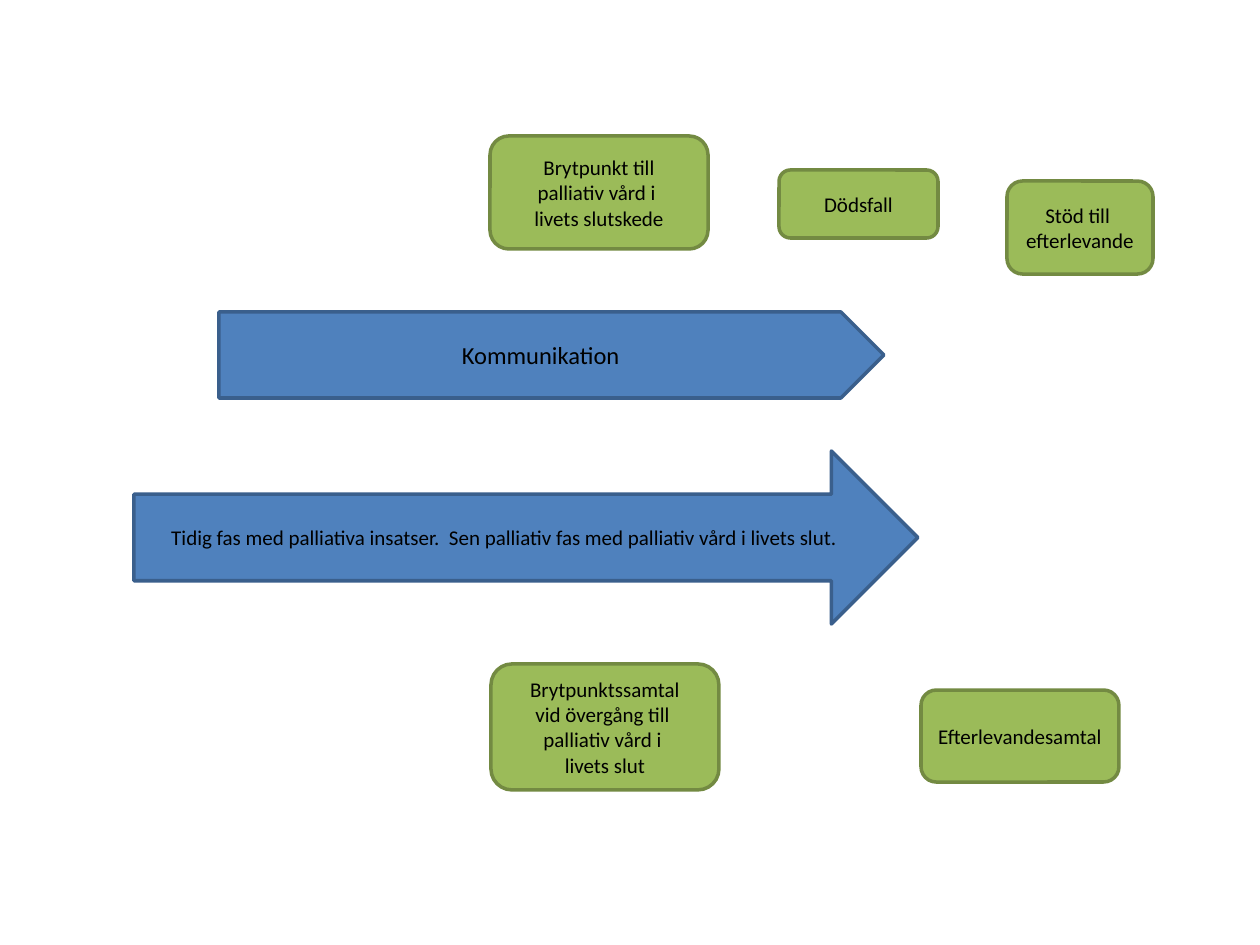
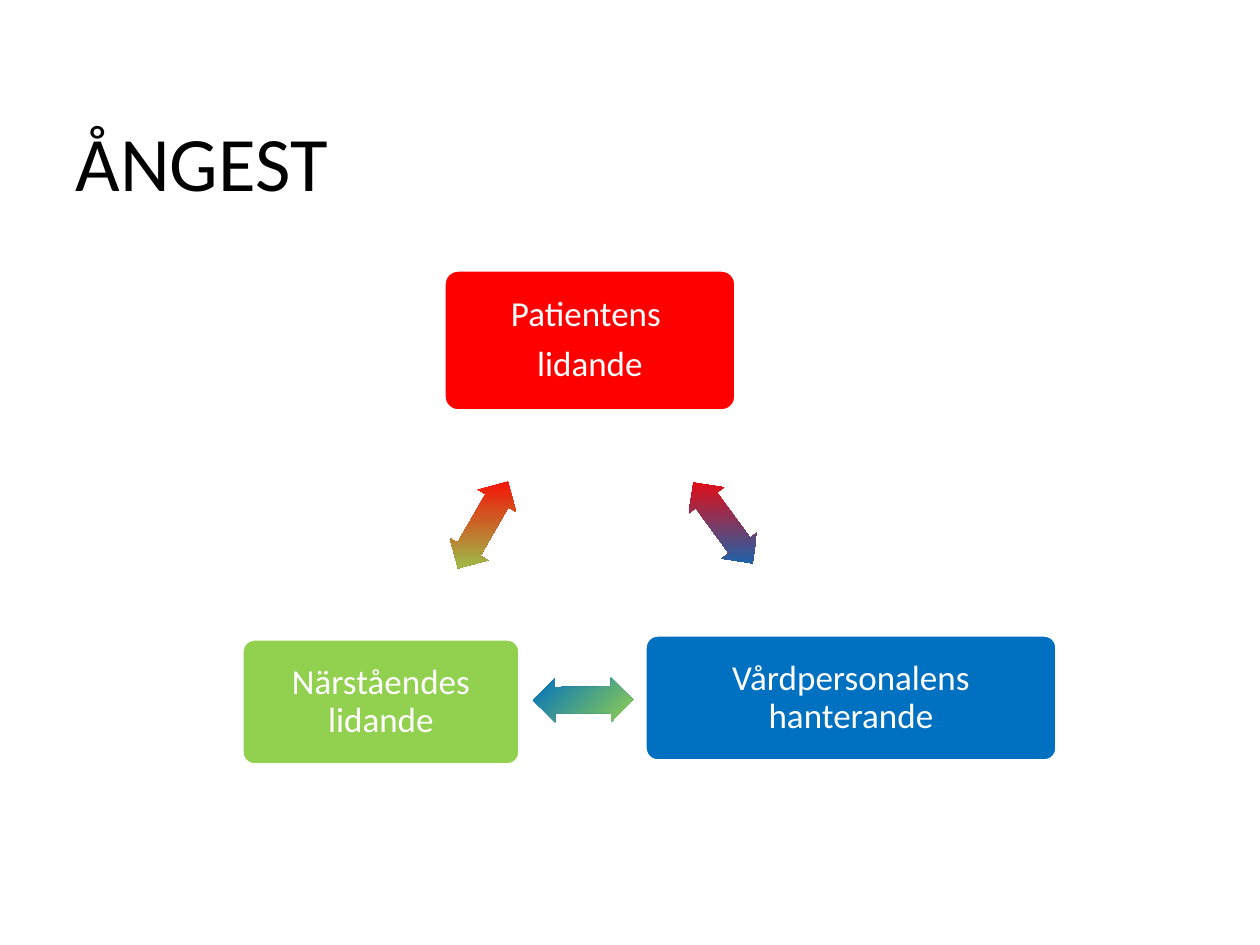
import pptx
import pptx.util
import pptx.dml.color
import pptx.enum.shapes
import pptx.enum.text
import pptx.oxml
import pptx.oxml.ns

SCALE = 914400 / 126
FONT = "Calibri"
HUES = {
    "ink": "000000", "white": "FFFFFF",
    "steel": "4F81BD", "navy": "3A5F8C",
    "moss": "9BBB59", "olive": "738A42",
    "red": "FF0000", "blue": "0070C0", "lime": "92D050",
}
KIND = pptx.enum.shapes.MSO_SHAPE
ALIGN = pptx.enum.text.PP_ALIGN
ANCHOR = pptx.enum.text.MSO_ANCHOR


def px(n):
    return pptx.util.Emu(round(n * SCALE))


def hue(name):
    return pptx.dml.color.RGBColor.from_string(HUES[name])


def style(frame, size, ink, align):
    for para in frame.paragraphs:
        para.alignment = align
        for run in para.runs:
            run.font.name = FONT
            run.font.size = pptx.util.Pt(size)
            run.font.color.rgb = hue(ink)


def draw(slide, kind, box, spot):
    x, y, w, h = spot
    shape = slide.shapes.add_shape(
        kind, px(box[0] + x), px(box[1] + y), px(w), px(h))
    shape.shadow.inherit = False
    return shape


def block(slide, kind, box, spot, text, fill, edge, size, ink):
    shape = draw(slide, kind, box, spot)
    shape.fill.solid()
    shape.fill.fore_color.rgb = hue(fill)
    shape.line.color.rgb = hue(edge)
    shape.line.width = pptx.util.Pt(2)
    frame = shape.text_frame
    frame.word_wrap = True
    frame.vertical_anchor = ANCHOR.MIDDLE
    frame.text = text
    style(frame, size, ink, ALIGN.CENTER)
    return shape


def flow(slide, box):
    arrows = [
        (KIND.RIGHT_ARROW, (0, 315, 784, 173), 12,
         "Tidig fas med palliativa insatser.  Sen palliativ fas med palliativ vård i livets slut."),
        (KIND.PENTAGON, (85, 176, 665, 86), 14, "Kommunikation"),
    ]
    for kind, spot, size, text in arrows:
        block(slide, kind, box, spot, text, "steel", "navy", size, "ink")
    steps = [
        ((356, 0, 218, 113), "Brytpunkt till\vpalliativ vård i \vlivets slutskede"),
        ((645, 34, 159, 68), "Dödsfall"),
        ((873, 45, 146, 93), "Stöd till \vefterlevande"),
        ((357, 528, 228, 126),
         "Brytpunktssamtal\vvid övergång till \vpalliativ vård i \vlivets slut"),
        ((787, 554, 198, 92), "Efterlevandesamtal"),
    ]
    for spot, text in steps:
        block(slide, KIND.ROUNDED_RECTANGLE, box, spot, text,
              "moss", "olive", 12, "ink")


def card(slide, box, spot, text, fill):
    shape = block(slide, KIND.ROUNDED_RECTANGLE, box, spot, text,
                  fill, "white", 20, "white")
    shape.adjustments[0] = 0.1
    frame = shape.text_frame
    frame.margin_left = frame.margin_right = px(14)
    frame.margin_top = frame.margin_bottom = px(14)
    for para in frame.paragraphs:
        para.line_spacing = 0.9
        para.space_after = pptx.util.Pt(7)


def link(slide, box, spot, turn, start, end, radial):
    shape = draw(slide, KIND.LEFT_RIGHT_ARROW, box, spot + (100, 44))
    shape.rotation = turn
    shape.adjustments[0] = 0.6
    shape.adjustments[1] = 0.5
    shape.line.fill.background()
    shape.fill.gradient()
    shape.fill.gradient_angle = 270
    for stop, name in zip(shape.fill.gradient_stops, (start, end)):
        stop.color.rgb = hue(name)
    grad = shape.element.spPr.find(pptx.oxml.ns.qn("a:gradFill"))
    grad.set("rotWithShape", "0")
    if radial:
        grad.replace(grad.find(pptx.oxml.ns.qn("a:lin")), pptx.oxml.parse_xml(
            f'<a:path {pptx.oxml.ns.nsdecls("a")} path="circle">'
            '<a:fillToRect l="100000" t="100000"/></a:path>'))


def triad(slide, box):
    cards = [
        ((202, 0, 292, 141), "Patientens \nlidande", "red"),
        ((403, 365, 412, 126), "Vårdpersonalens hanterande", "blue"),
        ((0, 369, 278, 126), "Närståendes lidande", "lime"),
    ]
    for spot, text, fill in cards:
        card(slide, box, spot, text, fill)
    links = [
        ((431, 231), 53.8, "red", "blue", False),
        ((291, 408), 179.6, "lime", "blue", True),
        ((191, 233), 300, "red", "lime", False),
    ]
    for args in links:
        link(slide, box, *args)


def head(slide, box, text):
    title = slide.shapes.title
    title.left, title.top, title.width, title.height = map(px, box)
    frame = title.text_frame
    frame.text = text
    frame.auto_size = pptx.enum.text.MSO_AUTO_SIZE.NONE
    frame.vertical_anchor = ANCHOR.TOP
    frame.margin_top = px(70)
    style(frame, 44, "ink", ALIGN.LEFT)


def main():
    deck = pptx.Presentation()
    deck.slide_width, deck.slide_height = px(1260), px(945)
    flow(deck.slides.add_slide(deck.slide_layouts[6]), (134, 136))
    slide = deck.slides.add_slide(deck.slide_layouts[5])
    head(slide, (63, 45, 1134, 150), "ÅNGEST")
    triad(slide, (242, 270))
    deck.save("out.pptx")


if __name__ == "__main__":
    main()
